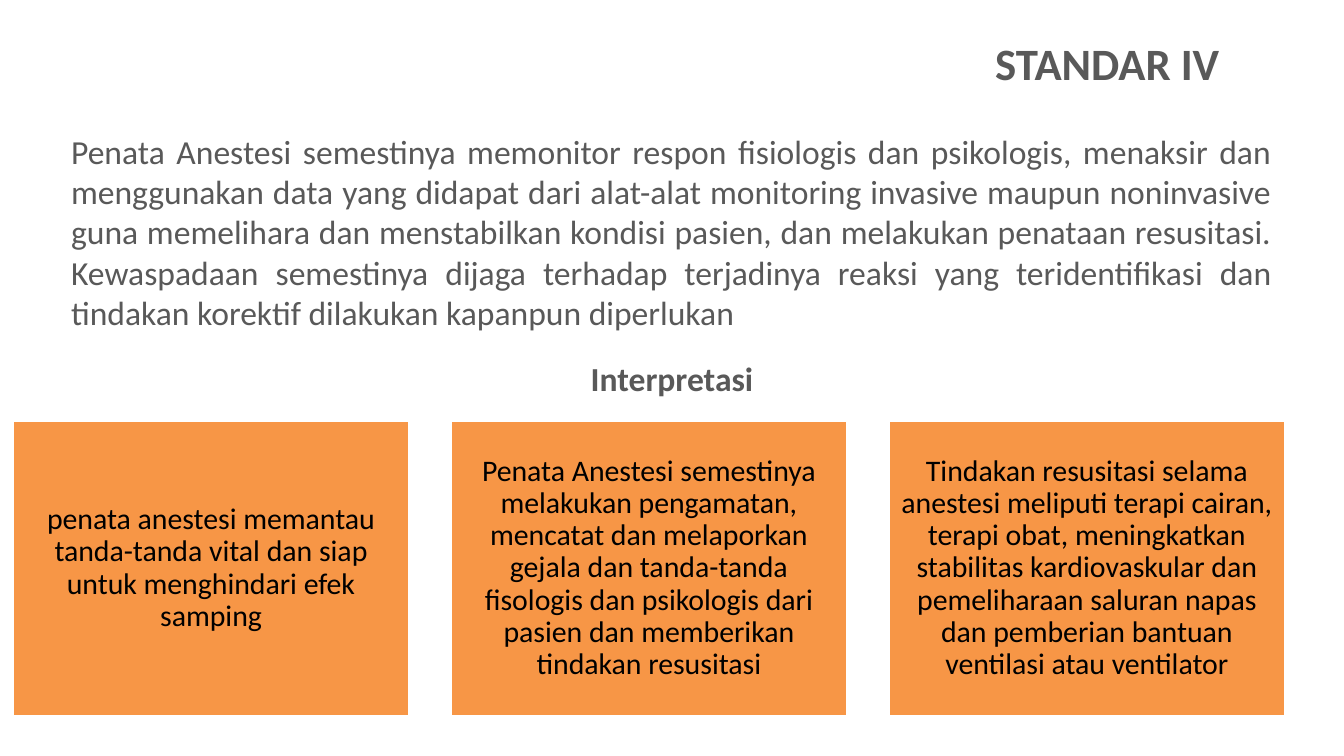
from dataclasses import dataclass

from pptx import Presentation
from pptx.dml.color import RGBColor
from pptx.enum.shapes import MSO_SHAPE
from pptx.enum.text import MSO_ANCHOR, PP_ALIGN
from pptx.slide import Slide
from pptx.text.text import TextFrame
from pptx.util import Pt

RECTANGLE = MSO_SHAPE.RECTANGLE
TOP, MIDDLE = MSO_ANCHOR.TOP, MSO_ANCHOR.MIDDLE
CENTER, RIGHT, JUSTIFY = PP_ALIGN.CENTER, PP_ALIGN.RIGHT, PP_ALIGN.JUSTIFY

GREY = RGBColor(0x59, 0x59, 0x59)
BLACK = RGBColor(0x00, 0x00, 0x00)
WHITE = RGBColor(0xFF, 0xFF, 0xFF)
ORANGE = RGBColor(0xF7, 0x96, 0x46)

FONT = "Calibri"
CARD_LEFT, CARD_TOP, CARD_WIDTH, CARD_HEIGHT = 6.5, 224.9, 213.2, 159.1
CARD_STEP = 234.6
CARD_INSET = 5


@dataclass(frozen=True)
class Passage:
    text: str
    left: float
    top: float
    width: float
    height: float
    size: float
    align: PP_ALIGN
    bold: bool = False


PASSAGES = (
    Passage(
        "Penata Anestesi semestinya memonitor respon fisiologis dan psikologis, "
        "menaksir dan menggunakan data yang didapat dari alat-alat monitoring "
        "invasive maupun noninvasive guna memelihara dan menstabilkan kondisi "
        "pasien, dan melakukan penataan resusitasi. Kewaspadaan semestinya dijaga "
        "terhadap terjadinya reaksi yang teridentifikasi dan tindakan korektif "
        "dilakukan kapanpun diperlukan",
        31, 66.5, 657.5, 85, 18, JUSTIFY,
    ),
    Passage("STANDAR IV", 229.7, 15.3, 430.6, 37.4, 24, RIGHT, bold=True),
    Passage("Interpretasi", 45.4, 188, 629.2, 31.7, 18, CENTER, bold=True),
)

INTERPRETATIONS = (
    "penata anestesi memantau tanda-tanda vital dan siap untuk menghindari efek "
    "samping",
    "Penata Anestesi semestinya melakukan pengamatan, mencatat dan melaporkan "
    "gejala dan tanda-tanda fisologis dan psikologis dari pasien dan memberikan "
    "tindakan resusitasi",
    "Tindakan resusitasi selama anestesi meliputi terapi cairan, terapi obat, "
    "meningkatkan stabilitas kardiovaskular dan pemeliharaan saluran napas dan "
    "pemberian bantuan ventilasi atau ventilator",
)


def write_text(
    frame: TextFrame,
    text: str,
    *,
    size: float,
    color: RGBColor,
    align: PP_ALIGN,
    bold: bool = False,
    anchor: MSO_ANCHOR = TOP,
    line_spacing: float = 1.0,
) -> None:
    """Fill a text frame with one formatted paragraph."""
    frame.word_wrap = True
    frame.vertical_anchor = anchor
    paragraph = frame.paragraphs[0]
    paragraph.alignment = align
    paragraph.line_spacing = line_spacing
    run = paragraph.add_run()
    run.text = text
    run.font.name = FONT
    run.font.size = Pt(size)
    run.font.bold = bold
    run.font.color.rgb = color


def draw_passage(slide: Slide, passage: Passage) -> None:
    """Place a passage of grey text on the slide."""
    box = slide.shapes.add_textbox(
        Pt(passage.left), Pt(passage.top), Pt(passage.width), Pt(passage.height)
    )
    write_text(
        box.text_frame, passage.text, size=passage.size, color=GREY,
        align=passage.align, bold=passage.bold,
    )


def draw_card(slide: Slide, column: int, interpretation: str) -> None:
    """Draw one orange interpretation card in its column."""
    card = slide.shapes.add_shape(
        RECTANGLE, Pt(CARD_LEFT + column * CARD_STEP), Pt(CARD_TOP),
        Pt(CARD_WIDTH), Pt(CARD_HEIGHT),
    )
    card.shadow.inherit = False
    card.fill.solid()
    card.fill.fore_color.rgb = ORANGE
    card.line.color.rgb = WHITE
    card.line.width = Pt(2)
    frame = card.text_frame
    frame.margin_left = frame.margin_right = Pt(CARD_INSET)
    frame.margin_top = frame.margin_bottom = Pt(CARD_INSET)
    write_text(
        frame, interpretation, size=16, color=BLACK, align=CENTER,
        anchor=MIDDLE, line_spacing=0.9,
    )


def main() -> None:
    """Build and save the slide."""
    presentation = Presentation()
    presentation.slide_width, presentation.slide_height = Pt(720), Pt(405)
    slide = presentation.slides.add_slide(presentation.slide_layouts[6])
    for passage in PASSAGES:
        draw_passage(slide, passage)
    for column, interpretation in enumerate(INTERPRETATIONS):
        draw_card(slide, column, interpretation)
    presentation.save("out.pptx")


if __name__ == "__main__":
    main()
